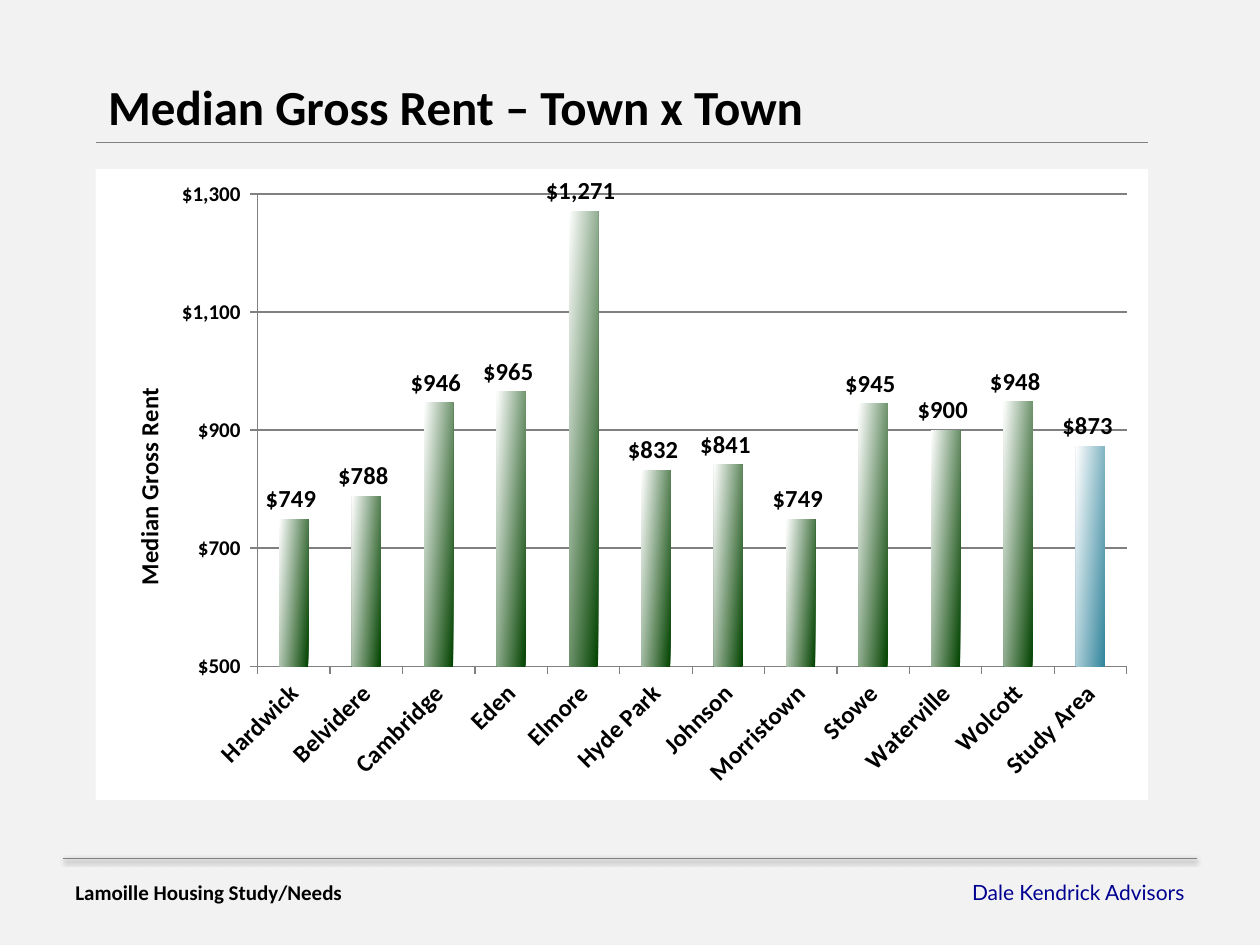
from pptx import Presentation
from pptx.chart.data import CategoryChartData
from pptx.dml.color import RGBColor
from pptx.enum.chart import XL_CHART_TYPE, XL_LABEL_POSITION, XL_TICK_MARK
from pptx.enum.shapes import MSO_CONNECTOR, MSO_SHAPE
from pptx.enum.text import PP_ALIGN
from pptx.oxml import parse_xml
from pptx.oxml.ns import nsdecls, qn
from pptx.util import Inches, Pt

RENTS = {
    "Hardwick": 749, "Belvidere": 788, "Cambridge": 946, "Eden": 965,
    "Elmore": 1271, "Hyde Park": 832, "Johnson": 841, "Morristown": 749,
    "Stowe": 945, "Waterville": 900, "Wolcott": 948, "Study Area": 873,
}
MONEY = '"$"#,##0_);\\("$"#,##0\\)'
SHADE = ('<a:outerShdw blurRad="39370" dist="20320" dir="5400000" rotWithShape="0">'
         '<a:srgbClr val="000000"><a:alpha val="38000"/></a:srgbClr></a:outerShdw>')


def color(code):
    return RGBColor.from_string(code)


def layout(node, index, **spots):
    for old in node.findall(qn("c:layout")):
        node.remove(old)
    inner = '<c:layoutTarget val="inner"/>' if "w" in spots else ""
    modes = "".join(f'<c:{key}Mode val="edge"/>' for key in "xy")
    sizes = "".join(f'<c:{key} val="{val}"/>' for key, val in spots.items())
    node.insert(index, parse_xml(
        f'<c:layout {nsdecls("c")}><c:manualLayout>{inner}{modes}{sizes}'
        '</c:manualLayout></c:layout>'))


class Deck:
    font = "Calibri"
    ink = "000000"
    gray = "808080"

    def __init__(self, slide):
        self.slide = slide

    def style(self, font, size, bold=True, name=None, ink=None):
        font.name = name or self.font
        font.size = Pt(size)
        font.bold = bold
        font.color.rgb = color(ink or self.ink)

    def panel(self, left, top, width, height, fill):
        shape = self.slide.shapes.add_shape(
            MSO_SHAPE.RECTANGLE, Inches(left), Inches(top), Inches(width), Inches(height))
        shape.shadow.inherit = False
        shape.fill.solid()
        shape.fill.fore_color.rgb = color(fill)
        shape.line.color.rgb = color(fill)
        shape.line.width = Pt(0.75)

    def rule(self, left, right, top, width, effect=""):
        line = self.slide.shapes.add_connector(
            MSO_CONNECTOR.STRAIGHT, Inches(left), Inches(top), Inches(right), Inches(top))
        line.line.color.rgb = color(self.gray)
        line.line.width = Pt(width)
        line._element.spPr.append(
            parse_xml(f'<a:effectLst {nsdecls("a")}>{effect}</a:effectLst>'))

    def text(self, left, top, width, height, words, size, align=PP_ALIGN.LEFT, **look):
        box = self.slide.shapes.add_textbox(
            Inches(left), Inches(top), Inches(width), Inches(height))
        box.text_frame.word_wrap = True
        para = box.text_frame.paragraphs[0]
        para.text = words
        para.alignment = align
        self.style(para.font, size, **look)

    def blend(self, fill, start):
        fill.gradient()
        fill.gradient_angle = 175
        for stop, code in zip(fill.gradient_stops, (start, "FFFFFF")):
            stop.color.rgb = color(code)

    def axis(self, axis, size):
        axis.major_tick_mark = XL_TICK_MARK.OUTSIDE
        axis.minor_tick_mark = XL_TICK_MARK.NONE
        axis.format.line.color.rgb = color(self.gray)
        axis.format.line.width = Pt(0.75)
        self.style(axis.tick_labels.font, size)

    def chart(self, left, top, width, height, rows, label):
        data = CategoryChartData()
        data.categories = list(rows)
        data.add_series("Series 1", list(rows.values()))
        chart = self.slide.shapes.add_chart(
            XL_CHART_TYPE.COLUMN_CLUSTERED, Inches(left), Inches(top),
            Inches(width), Inches(height), data).chart
        chart.has_legend = False
        chart.has_title = False
        self.style(chart.font, 10, bold=False)
        root = chart._chartSpace
        root.find(qn("c:chart")).addnext(parse_xml(
            f'<c:spPr {nsdecls("c", "a")}><a:solidFill><a:srgbClr val="FFFFFF"/>'
            '</a:solidFill><a:ln><a:noFill/></a:ln></c:spPr>'))
        layout(root.chart.plotArea, 0, x=0.154, y=0.04, w=0.826, h=0.748)

        towns, money = chart.category_axis, chart.value_axis
        self.axis(towns, 14)
        towns._element.find(qn("c:txPr")).find(qn("a:bodyPr")).set("rot", "-2700000")
        self.axis(money, 12)
        money.minimum_scale, money.maximum_scale, money.major_unit = 500, 1300, 200
        money.has_major_gridlines = True
        money.major_gridlines.format.line.color.rgb = color(self.gray)
        money.major_gridlines.format.line.width = Pt(0.75)
        money.tick_labels.number_format = MONEY
        money.tick_labels.number_format_is_linked = False

        frame = money.axis_title.text_frame
        frame.text = label
        self.style(frame.paragraphs[0].font, 14)
        body = frame._txBody.find(qn("a:bodyPr"))
        body.set("rot", "-5400000")
        body.set("vert", "horz")
        layout(money.axis_title._element, 1, x=0.03, y=0.34)

        plot = chart.plots[0]
        plot.gap_width = 150
        plot.vary_by_categories = False
        bars = plot.series[0]
        self.blend(bars.format.fill, "024300")
        self.blend(bars.points[len(rows) - 1].format.fill, "31859C")
        tags = bars.data_labels
        tags.show_value = True
        tags.position = XL_LABEL_POSITION.OUTSIDE_END
        tags.number_format = MONEY
        tags.number_format_is_linked = False
        self.style(tags.font, 14)


def main():
    show = Presentation()
    show.slide_width, show.slide_height = Inches(10), Inches(7.5)
    deck = Deck(show.slides.add_slide(show.slide_layouts[6]))
    deck.panel(0, 0, 10, 7.5, "F2F2F2")
    deck.rule(0.5, 9.5, 6.81, 0.5, SHADE)
    deck.text(6.54, 6.93, 2.96, 0.3, "Dale Kendrick Advisors", 12, PP_ALIGN.RIGHT,
              bold=False, name="Lato", ink="000090")
    deck.text(0.5, 6.93, 2.96, 0.3, "Lamoille Housing Study/Needs", 12)
    deck.text(0.76, 0.56, 8.65, 0.57, "Median Gross Rent – Town x Town", 28)
    deck.rule(0.76, 9.11, 1.13, 1)
    deck.chart(0.76, 1.34, 8.35, 5.01, RENTS, "Median Gross Rent")
    show.save("out.pptx")


if __name__ == "__main__":
    main()
